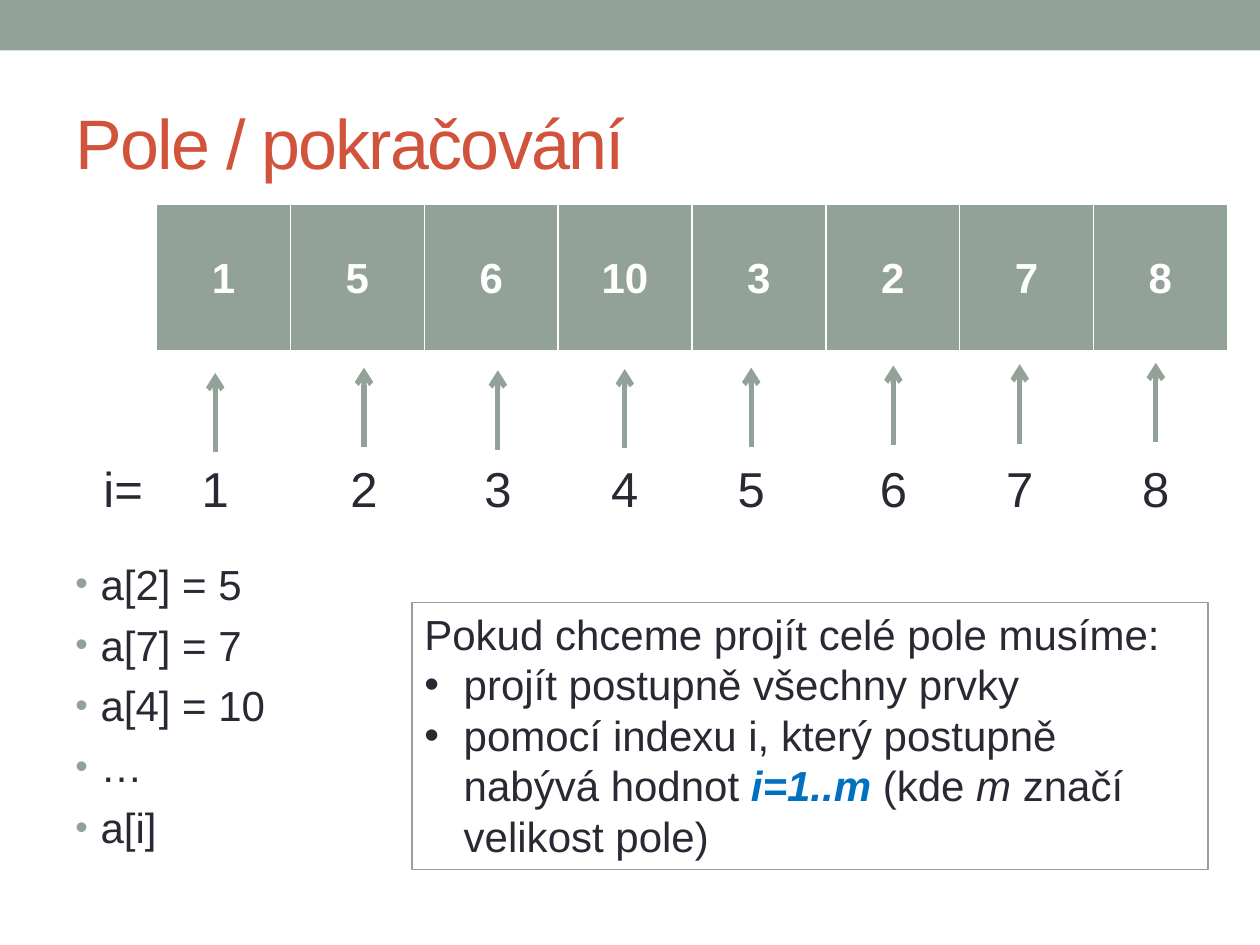
from lxml.etree import SubElement
from pptx import Presentation
from pptx.dml.color import RGBColor
from pptx.enum.shapes import MSO_CONNECTOR, MSO_SHAPE
from pptx.enum.text import MSO_ANCHOR, PP_ALIGN
from pptx.oxml.ns import qn
from pptx.util import Pt

SAGE = RGBColor(0x93, 0xA2, 0x99)
RED = RGBColor(0xD2, 0x53, 0x3C)
DARK = RGBColor(0x29, 0x29, 0x34)
BLUE = RGBColor(0x00, 0x70, 0xC0)
WHITE = RGBColor(0xFF, 0xFF, 0xFF)

VALUES = [1, 5, 6, 10, 3, 2, 7, 8]
ARROWS = [(123, 258.5), (208, 255.5), (284.5, 257), (357, 256.3),
          (429.3, 255.5), (510.5, 254.2), (582.7, 253.5), (660.5, 252.7)]
ARROW_LENGTH = 45.4
INDEX_TOP = 258.5
EXAMPLES = ["a[2] = 5", "a[7] = 7", "a[4] = 10", "…", "a[i]"]


def style(para, size, color=DARK, bold=False):
    para.font.name = "Arial"
    para.font.size = Pt(size)
    para.font.bold = bold
    para.font.color.rgb = color


def add_text(page, left, top, width, height, text, size, color=DARK,
             align=PP_ALIGN.LEFT, anchor=MSO_ANCHOR.TOP):
    box = page.shapes.add_textbox(Pt(left), Pt(top), Pt(width), Pt(height))
    frame = box.text_frame
    frame.word_wrap = True
    frame.vertical_anchor = anchor
    frame.text = text
    for para in frame.paragraphs:
        para.alignment = align
        style(para, size, color)
    return box


def add_bullet(para, indent, color=None, percent=100):
    properties = para._p.get_or_add_pPr()
    properties.set("marL", str(Pt(indent)))
    properties.set("indent", str(Pt(-indent)))
    if color is not None:
        bullet_color = SubElement(properties, qn("a:buClr"))
        SubElement(bullet_color, qn("a:srgbClr"), val=str(color))
    SubElement(properties, qn("a:buSzPct"), val=str(percent * 1000))
    SubElement(properties, qn("a:buFont"), typeface="Arial")
    SubElement(properties, qn("a:buChar"), char="•")


def add_rectangle(page, left, top, width, height):
    shape = page.shapes.add_shape(MSO_SHAPE.RECTANGLE, Pt(left), Pt(top), Pt(width), Pt(height))
    shape.shadow.inherit = False
    return shape


def add_bar(page):
    bar = add_rectangle(page, 0, 0, 720, 28.8)
    bar.fill.solid()
    bar.fill.fore_color.rgb = SAGE
    bar.line.fill.background()


def add_title(page):
    box = add_text(page, 36, 41.8, 648, 77.8, "Pole / pokračování", 40, RED,
                   anchor=MSO_ANCHOR.MIDDLE)
    span = box.text_frame.paragraphs[0].runs[0]
    span._r.get_or_add_rPr().set("spc", "-100")


def add_borders(cell):
    properties = cell._tc.get_or_add_tcPr()
    for side, width in (("L", 1), ("R", 1), ("T", 1), ("B", 3)):
        border = SubElement(properties, qn(f"a:ln{side}"), w=str(Pt(width)))
        fill = SubElement(border, qn("a:solidFill"))
        SubElement(fill, qn("a:srgbClr"), val=str(WHITE))


def add_array(page):
    table = page.shapes.add_table(1, len(VALUES), Pt(89.5), Pt(116.9), Pt(612), Pt(84.6)).table
    for cell, value in zip(table.iter_cells(), VALUES):
        add_borders(cell)
        cell.fill.solid()
        cell.fill.fore_color.rgb = SAGE
        cell.vertical_anchor = MSO_ANCHOR.MIDDLE
        cell.text = str(value)
        para = cell.text_frame.paragraphs[0]
        para.alignment = PP_ALIGN.CENTER
        style(para, 24, WHITE, bold=True)


def add_arrow(page, x, bottom):
    arrow = page.shapes.add_connector(MSO_CONNECTOR.STRAIGHT, Pt(x), Pt(bottom),
                                      Pt(x), Pt(bottom - ARROW_LENGTH))
    arrow.line.color.rgb = SAGE
    arrow.line.width = Pt(3)
    SubElement(arrow.line._get_or_add_ln(), qn("a:tailEnd"), type="arrow")
    SubElement(arrow._element.spPr, qn("a:effectLst"))


def add_indices(page):
    add_text(page, 52, INDEX_TOP, 51, 41, "i=", 28)
    for index, (x, bottom) in enumerate(ARROWS, 1):
        add_arrow(page, x, bottom)
        add_text(page, x - 17, INDEX_TOP, 34, 41, str(index), 28, align=PP_ALIGN.CENTER)


def add_examples(page):
    box = add_text(page, 36, 315.4, 142.6, 194.4, "", 24)
    frame = box.text_frame
    for number, text in enumerate(EXAMPLES):
        para = frame.add_paragraph() if number else frame.paragraphs[0]
        para.text = text
        properties = para._p.get_or_add_pPr()
        for child in list(properties):
            properties.remove(child)
        add_bullet(para, 14.4, SAGE, 85)
        para.space_before = Pt(6)
        style(para, 24)


def add_explanation(page):
    box = add_rectangle(page, 235.4, 344.2, 455, 152.6)
    box.fill.background()
    box.line.color.rgb = SAGE
    box.line.width = Pt(0.75)
    frame = box.text_frame
    frame.word_wrap = True
    frame.vertical_anchor = MSO_ANCHOR.TOP
    lines = [
        ["Pokud chceme projít celé pole musíme:"],
        ["projít postupně všechny prvky"],
        ["pomocí indexu i, který postupně nabývá hodnot ", "i=1..m", " (kde ", "m",
         " značí velikost pole)"],
    ]
    for number, parts in enumerate(lines):
        para = frame.add_paragraph() if number else frame.paragraphs[0]
        para.alignment = PP_ALIGN.LEFT
        if number:
            add_bullet(para, 22.5)
        style(para, 24)
        for part in parts:
            span = para.add_run()
            span.text = part
            span.font.color.rgb = DARK
    formula, size_name = para.runs[1], para.runs[3]
    formula.font.bold = formula.font.italic = size_name.font.italic = True
    formula.font.color.rgb = BLUE


def main():
    deck = Presentation()
    deck.slide_width, deck.slide_height = Pt(720), Pt(540)
    page = deck.slides.add_slide(deck.slide_layouts[6])
    add_bar(page)
    add_title(page)
    add_examples(page)
    add_array(page)
    add_indices(page)
    add_explanation(page)
    deck.save("out.pptx")


if __name__ == "__main__":
    main()
